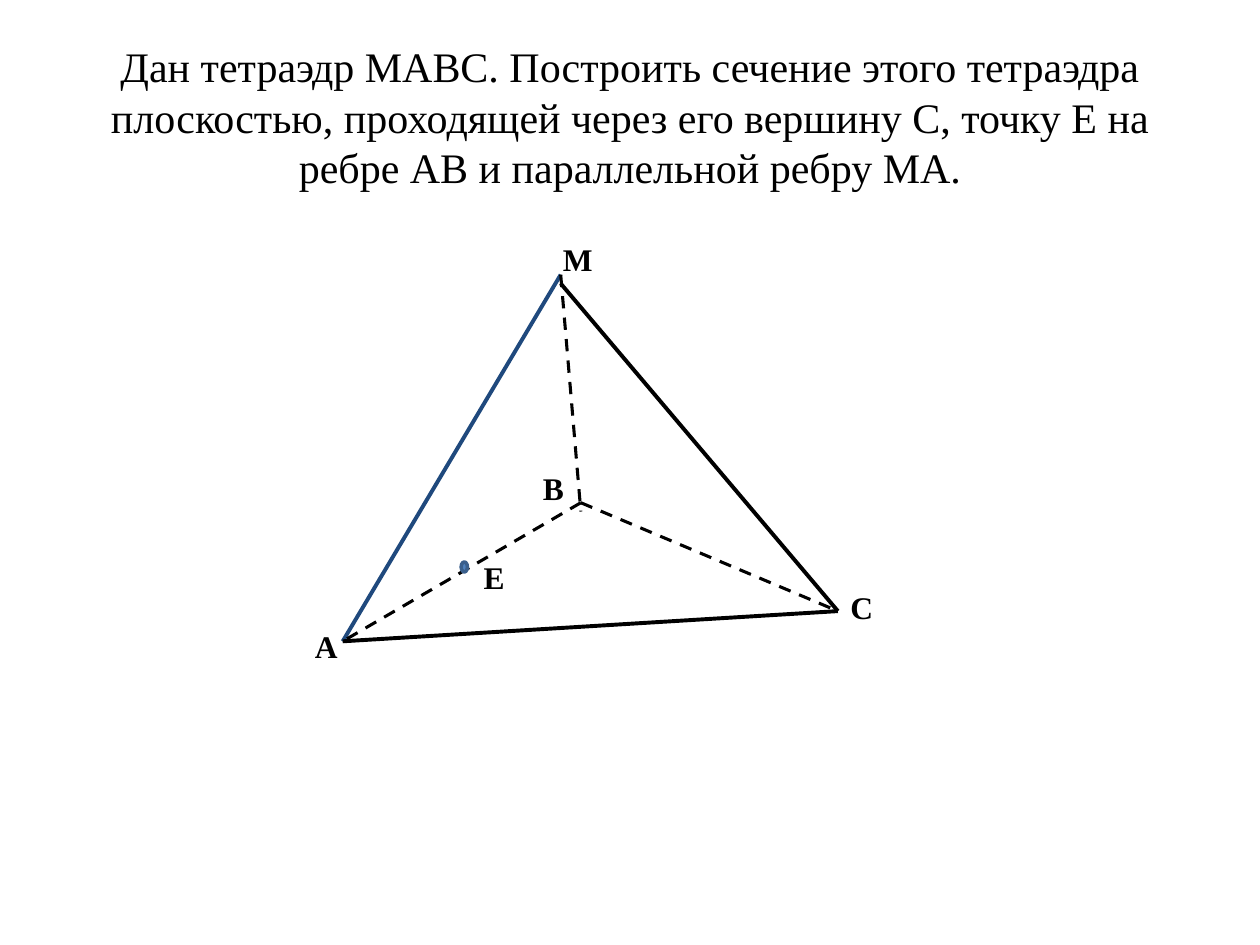
from lxml.etree import SubElement
from pptx import Presentation
from pptx.dml.color import RGBColor
from pptx.enum.dml import MSO_LINE
from pptx.enum.shapes import MSO_CONNECTOR, MSO_SHAPE
from pptx.enum.text import MSO_ANCHOR, MSO_AUTO_SIZE, PP_ALIGN
from pptx.oxml.ns import qn
from pptx.util import Inches, Pt

COLORS = {"ink": "000000", "edge": "1F497D", "point": "4F81BD", "outline": "3A5F8C"}
FONT = "Times New Roman"
TITLE = ("Дан тетраэдр MABC. Построить сечение этого тетраэдра плоскостью, "
         "проходящей через его вершину C, точку E на ребре AB и параллельной ребру MA.")

A, B, C, M = (2.72, 5.09), (4.61, 3.99), (6.65, 4.85), (4.45, 2.18)
B_END = (4.61, 4.06)    # edge MB runs slightly past B
M_START = (4.45, 2.25)  # edge MC begins slightly below M

EDGES = [
    (M, A, "edge", False),
    (M, B_END, "ink", True),
    (M_START, C, "ink", False),
    (A, C, "ink", False),
    (B, C, "ink", True),
    (B, A, "ink", True),
]
LABELS = [
    ("M", 4.37, 1.86, 0.44, False),
    ("C", 6.65, 4.62, 0.38, False),
    ("B", 4.21, 3.67, 0.37, False),
    ("A", 2.4, 4.93, 0.38, False),
    ("E", 3.74, 4.38, 0.31, True),
]


def color(name):
    return RGBColor.from_string(COLORS[name])


def write(tf, text, size=18, bold=False, align=PP_ALIGN.LEFT):
    p = tf.paragraphs[0]
    p.alignment = align
    r = p.add_run()
    r.text = text
    r.font.name = FONT
    r.font.size = Pt(size)
    r.font.bold = bold
    r.font.color.rgb = color("ink")


def add_title(s):
    sp = s.shapes.title
    sp.left, sp.top, sp.width, sp.height = map(Inches, (0.5, 0.3, 9, 1.25))
    sp.text_frame.vertical_anchor = MSO_ANCHOR.MIDDLE
    write(sp.text_frame, TITLE, size=24, align=PP_ALIGN.CENTER)


def add_edge(s, start, end, color_name, hidden):
    """Draw an edge; hidden edges are thinner and dashed."""
    line = s.shapes.add_connector(MSO_CONNECTOR.STRAIGHT, *map(Inches, start + end))
    line.line.color.rgb = color(color_name)
    line.line.width = Pt(1.75 if hidden else 2.25)
    if hidden:
        line.line.dash_style = MSO_LINE.DASH
    SubElement(line._element.spPr, qn("a:effectLst"))


def add_label(s, text, left, top, width, wrap):
    tf = s.shapes.add_textbox(*map(Inches, (left, top, width, 0.4))).text_frame
    tf.word_wrap = wrap
    tf.auto_size = MSO_AUTO_SIZE.SHAPE_TO_FIT_TEXT
    write(tf, text, bold=True)


def add_point(s):
    sp = s.shapes.add_shape(MSO_SHAPE.FLOWCHART_CONNECTOR,
                            *map(Inches, (3.66, 4.46, 0.05, 0.08)))
    sp.shadow.inherit = False
    sp.fill.solid()
    sp.fill.fore_color.rgb = color("point")
    sp.line.color.rgb = color("outline")
    sp.line.width = Pt(2)


def main():
    prs = Presentation()
    prs.slide_width, prs.slide_height = Inches(10), Inches(7.5)
    s = prs.slides.add_slide(prs.slide_layouts[5])
    add_title(s)
    for edge in EDGES:
        add_edge(s, *edge)
    add_point(s)
    for label in LABELS:
        add_label(s, *label)
    prs.save("out.pptx")


if __name__ == "__main__":
    main()
